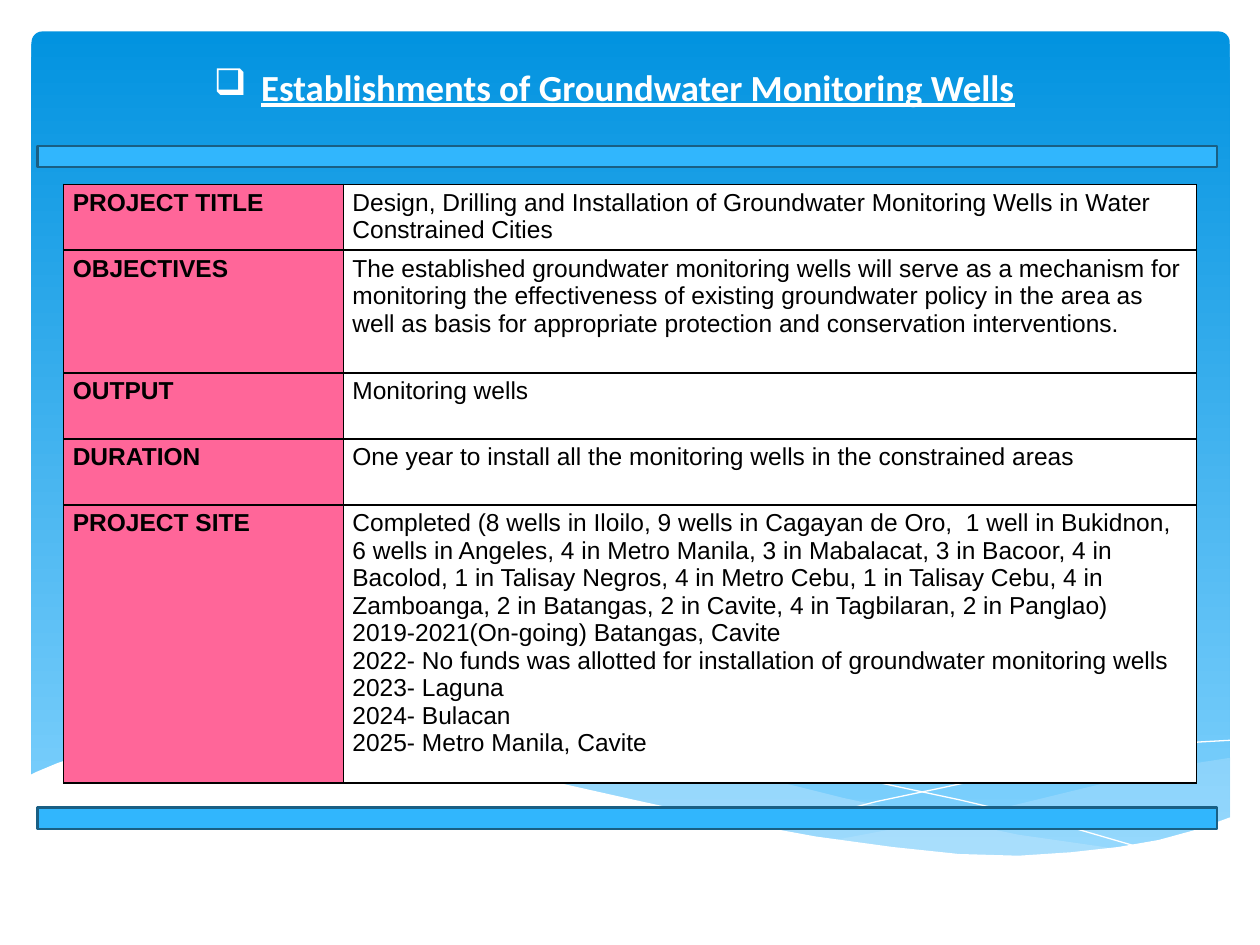
from lxml.etree import SubElement
from pptx import Presentation
from pptx.dml.color import RGBColor
from pptx.enum.shapes import MSO_SHAPE
from pptx.enum.text import MSO_ANCHOR, MSO_AUTO_SIZE, PP_ALIGN
from pptx.oxml.ns import qn
from pptx.util import Pt

COLORS = {
    "sky_top": "0293E0", "sky_bottom": "83D3FE", "wave": "C6E7FC",
    "bar": "31B6FD", "bar_edge": "195F84", "label": "FF6699",
    "white": "FFFFFF", "black": "000000",
}


def color(name):
    return RGBColor.from_string(COLORS[name])


def add_curve(slide, points, closed):
    """Draw a bare outline through points given in points (1/72 inch)."""
    builder = slide.shapes.build_freeform(*points[0], scale=Pt(1))
    builder.add_line_segments(points[1:], close=closed)
    curve = builder.convert_to_shape()
    curve.shadow.inherit = False
    return curve


prs = Presentation()
prs.slide_width, prs.slide_height = Pt(720), Pt(540)
slide = prs.slides.add_slide(prs.slide_layouts[5])

# Blue gradient panel
panel = slide.shapes.add_shape(
    MSO_SHAPE.ROUNDED_RECTANGLE, Pt(18), Pt(18), Pt(684.7), Pt(475.2))
panel.adjustments[0] = 0.013
panel.shadow.inherit = False
panel.line.fill.background()
panel.fill.gradient()
panel.fill.gradient_angle = 270
for stop, position, name in zip(panel.fill.gradient_stops, (0, 1), ("sky_top", "sky_bottom")):
    stop.position = position
    stop.color.rgb = color(name)

# Waves at the foot of the panel
right_wave = [
    (703, 433), (684, 436), (664, 440), (642, 445), (621, 450), (580, 460),
    (543, 468), (509, 474), (477, 480), (498, 483), (518, 485), (537, 487),
    (563, 489), (587, 490), (608, 489), (629, 487), (647, 484), (664, 480),
    (685, 474), (703, 467)]
middle_wave = [
    (644, 486), (624, 483), (582, 477), (534, 467), (482, 456), (454, 449),
    (420, 441), (390, 435), (361, 430), (335, 427), (302, 424), (274, 423),
    (248, 423), (226, 425), (207, 427), (233, 430), (261, 435), (292, 441),
    (324, 449), (353, 456), (382, 462), (421, 471), (457, 477), (490, 482),
    (520, 486), (549, 489), (574, 490), (597, 490), (618, 489)]
falling_line = [
    (223, 430), (242, 427), (261, 425), (289, 424), (325, 424), (352, 426),
    (384, 429), (419, 433), (459, 439), (501, 447), (548, 457), (599, 469),
    (654, 485)]
rising_line = [
    (442, 474), (470, 466), (501, 458), (539, 450), (581, 441), (624, 432),
    (646, 429), (666, 426), (685, 424), (703, 423)]
white_foot = [
    (703, 467), (684, 474), (662, 480), (639, 484), (612, 487), (582, 489),
    (548, 488), (510, 484), (466, 478), (417, 469), (362, 457), (322, 448),
    (281, 438), (245, 431), (210, 426), (180, 423), (152, 422), (127, 422),
    (105, 423), (86, 424), (68, 427), (48, 431), (33, 436), (21, 441),
    (17, 443), (17, 526), (703, 526)]

for points, name, opacity in (
        (right_wave, "wave", 29), (middle_wave, "wave", 40),
        (falling_line, None, None), (rising_line, None, None),
        (white_foot, "white", 100)):
    curve = add_curve(slide, points, closed=name is not None)
    if name is None:
        curve.fill.background()
        curve.line.color.rgb = color("white")
        curve.line.width = Pt(0)
        continue
    curve.line.fill.background()
    curve.fill.solid()
    curve.fill.fore_color.rgb = color(name)
    if opacity < 100:
        tint = curve.element.spPr.find(qn("a:solidFill"))[0]
        SubElement(tint, qn("a:alpha"), val=str(opacity * 1000))

# Title, moved in front of the background
title = slide.shapes.title
slide.shapes.element.append(title.element)
title.left, title.top, title.width, title.height = Pt(36.7), Pt(27.4), Pt(628.6), Pt(38.2)
title.text_frame.text = "Establishments of Groundwater Monitoring Wells"
title.text_frame.vertical_anchor = MSO_ANCHOR.BOTTOM
title.text_frame.auto_size = MSO_AUTO_SIZE.NONE
heading = title.text_frame.paragraphs[0]
heading.alignment = PP_ALIGN.CENTER
heading_props = heading._p.get_or_add_pPr()
heading_props.set("marL", str(Pt(27)))
heading_props.set("indent", str(-Pt(27)))
SubElement(heading_props, qn("a:buChar"), char="❑")
heading.font.name = "Calibri"
heading.font.size = Pt(21)
heading.font.bold = True
heading.font.underline = True
heading.font.color.rgb = color("white")

# Bars below and above the table
for top in (461.5, 83.5):
    bar = slide.shapes.add_shape(MSO_SHAPE.RECTANGLE, Pt(21.4), Pt(top), Pt(674), Pt(12.2))
    bar.shadow.inherit = False
    bar.fill.solid()
    bar.fill.fore_color.rgb = color("bar")
    bar.line.color.rgb = color("bar_edge")
    bar.line.width = Pt(1.25)

# Project table: label, description, row height
project = [
    ("PROJECT TITLE",
     "Design, Drilling and Installation of Groundwater Monitoring Wells in Water "
     "Constrained Cities", 37.7),
    ("OBJECTIVES",
     "The established groundwater monitoring wells will serve as a mechanism for "
     "monitoring the effectiveness of existing groundwater policy in the area as well as "
     "basis for appropriate protection and conservation interventions.", 70.2),
    ("OUTPUT", "Monitoring wells", 37.7),
    ("DURATION", "One year to install all the monitoring wells in the constrained areas", 37.7),
    ("PROJECT SITE",
     "Completed (8 wells in Iloilo, 9 wells in Cagayan de Oro,  1 well in Bukidnon, "
     "6 wells in Angeles, 4 in Metro Manila, 3 in Mabalacat, 3 in Bacoor, 4 in Bacolod, "
     "1 in Talisay Negros, 4 in Metro Cebu, 1 in Talisay Cebu, 4 in Zamboanga, "
     "2 in Batangas, 2 in Cavite, 4 in Tagbilaran, 2 in Panglao)\n"
     "2019-2021(On-going) Batangas, Cavite\n"
     "2022- No funds was allotted for installation of groundwater monitoring wells\n"
     "2023- Laguna\n"
     "2024- Bulacan\n"
     "2025- Metro Manila, Cavite", 159),
]
table = slide.shapes.add_table(
    len(project), 2, Pt(36.4), Pt(105.3), Pt(647.3), Pt(342.3)).table
table.columns[0].width, table.columns[1].width = Pt(159.8), Pt(487.5)

for row, (label, description, height) in enumerate(project):
    table.rows[row].height = Pt(height)
    for column, content in enumerate((label, description)):
        cell = table.cell(row, column)
        cell.text = content
        cell.margin_left = cell.margin_right = Pt(5.2)
        cell.margin_top = cell.margin_bottom = Pt(2.6)
        cell_props = cell._tc.get_or_add_tcPr()
        for side in ("lnL", "lnR", "lnT", "lnB"):
            border = SubElement(cell_props, qn(f"a:{side}"), w=str(Pt(1)))
            border_fill = SubElement(border, qn("a:solidFill"))
            SubElement(border_fill, qn("a:srgbClr"), val=COLORS["black"])
        cell.fill.solid()
        cell.fill.fore_color.rgb = color("white" if column else "label")
        for paragraph in cell.text_frame.paragraphs:
            paragraph.font.name = "Arial"
            paragraph.font.size = Pt(14)
            paragraph.font.bold = column == 0
            paragraph.font.color.rgb = color("black")

prs.save("out.pptx")
